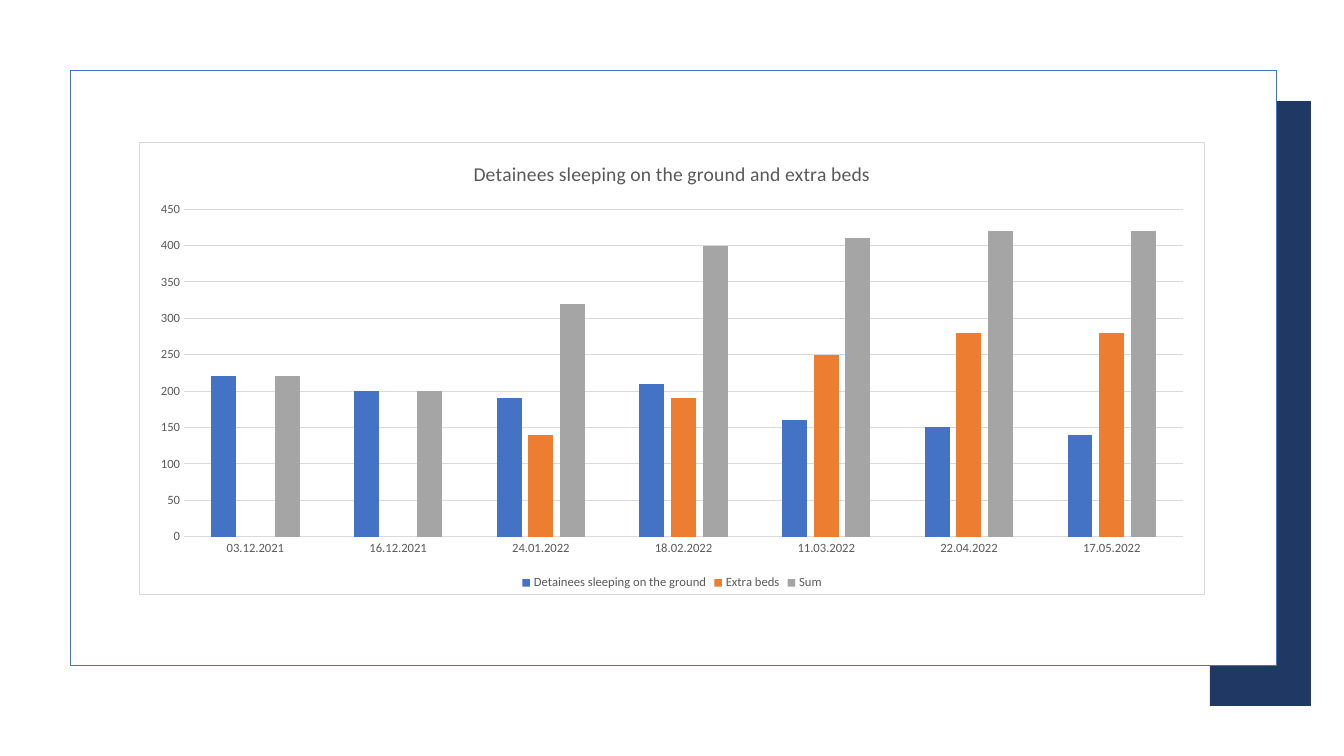
from lxml import etree
from pptx import Presentation
from pptx.chart.data import CategoryChartData
from pptx.dml.color import RGBColor
from pptx.enum.chart import XL_CHART_TYPE as ChartType
from pptx.enum.chart import XL_LEGEND_POSITION as LegendPosition
from pptx.enum.chart import XL_TICK_MARK as TickMark
from pptx.enum.shapes import MSO_SHAPE as Shape
from pptx.oxml import parse_xml
from pptx.oxml.ns import nsdecls, qn
from pptx.util import Inches, Pt

FONT = "Calibri"
BLUE, WHITE, GRID, TEXT = "4472C4", "FFFFFF", "D9D9D9", "595959"
RIBBON_FRONT = [(12.93, 7.42), (12.16, 6.89), (12.16, 1), (12.93, 1.53)]
RIBBON_FOLD = [(12.62, 6.61), (12.16, 6.9), (12.16, 1), (12.62, 0.7)]

DATES = ["03.12.2021", "16.12.2021", "24.01.2022", "18.02.2022",
         "11.03.2022", "22.04.2022", "17.05.2022"]
SERIES = [
    ("Detainees sleeping on the ground", BLUE, [220, 200, 190, 210, 160, 150, 140]),
    ("Extra beds", "ED7D31", [None, None, 140, 190, 250, 280, 280]),
    ("Sum", "A5A5A5", [220, 200, 320, 400, 410, 420, 420]),
]


def color(value):
    return RGBColor.from_string(value)


def set_fill(item, value):
    item.fill.solid()
    item.fill.fore_color.rgb = color(value)


def set_line(line, value, width):
    line.color.rgb = color(value)
    line.width = Pt(width)


def set_font(font, size, value=TEXT):
    font.name = FONT
    font.size = Pt(size)
    font.bold = False
    font.color.rgb = color(value)


def add_text(frame, text, size, value=TEXT):
    span = frame.paragraphs[0].add_run()
    span.text = text
    set_font(span.font, size, value)


def add_ribbon(page, points, fill):
    builder = page.shapes.build_freeform(*points[0], scale=Inches(1))
    builder.add_line_segments(points[1:], close=True)
    ribbon = builder.convert_to_shape()
    ribbon.shadow.inherit = False
    set_fill(ribbon, fill)
    ribbon.line.fill.background()


def add_panel(page, left, top, width, height):
    panel = page.shapes.add_shape(
        Shape.RECTANGLE, Inches(left), Inches(top), Inches(width), Inches(height))
    panel.shadow.inherit = False
    set_fill(panel, WHITE)
    set_line(panel.line, BLUE, 1)


def frame_chart(chart, fill, border, width):
    """Fill and outline the chart area."""
    area = parse_xml(
        f'<c:spPr {nsdecls("c", "a")}>'
        f'<a:solidFill><a:srgbClr val="{fill}"/></a:solidFill>'
        f'<a:ln w="{Pt(width)}"><a:solidFill><a:srgbClr val="{border}"/></a:solidFill></a:ln>'
        '</c:spPr>')
    chart.element.find(qn("c:chart")).addnext(area)
    corners = chart.element.find(qn("c:roundedCorners"))
    if corners is None:
        corners = etree.Element(qn("c:roundedCorners"))
        chart.element.find(qn("c:chart")).addprevious(corners)
        date_system = chart.element.find(qn("c:date1904"))
        if date_system is not None:
            date_system.addnext(corners)
    corners.set("val", "0")


def style_axes(chart):
    for axis in (chart.category_axis, chart.value_axis):
        axis.major_tick_mark = axis.minor_tick_mark = TickMark.NONE
        set_font(axis.tick_labels.font, 9)
    set_line(chart.category_axis.format.line, GRID, 0.75)
    values = chart.value_axis
    values.minimum_scale, values.maximum_scale, values.major_unit = 0, 450, 50
    values.format.line.fill.background()
    values.has_major_gridlines = True
    set_line(values.major_gridlines.format.line, GRID, 0.75)


def add_column_chart(page, title, left, top, width, height):
    data = CategoryChartData()
    data.categories = DATES
    for name, _, values in SERIES:
        data.add_series(name, values)
    chart = page.shapes.add_chart(
        ChartType.COLUMN_CLUSTERED, Inches(left), Inches(top),
        Inches(width), Inches(height), data).chart
    set_font(chart.font, 10, "000000")
    frame_chart(chart, WHITE, GRID, 0.75)
    chart.has_title = True
    add_text(chart.chart_title.text_frame, title, 14)
    chart.chart_title.include_in_layout = False
    chart.has_legend = True
    chart.legend.position = LegendPosition.BOTTOM
    chart.legend.include_in_layout = False
    set_font(chart.legend.font, 9)
    style_axes(chart)

    plot = chart.plots[0]
    plot.gap_width, plot.overlap = 219, -27
    plot.vary_by_categories = False
    for series, (_, fill, _) in zip(plot.series, SERIES):
        set_fill(series.format, fill)
        series.invert_if_negative = False


def main():
    deck = Presentation()
    deck.slide_width, deck.slide_height = Inches(13.33), Inches(7.5)
    page = deck.slides.add_slide(deck.slide_layouts[6])
    add_ribbon(page, RIBBON_FRONT, "2F5597")
    add_ribbon(page, RIBBON_FOLD, "203864")
    add_panel(page, 0.7, 0.7, 11.96, 5.9)
    add_column_chart(page, "Detainees sleeping on the ground and extra beds",
                     1.38, 1.41, 10.57, 4.49)
    deck.save("out.pptx")


if __name__ == "__main__":
    main()
